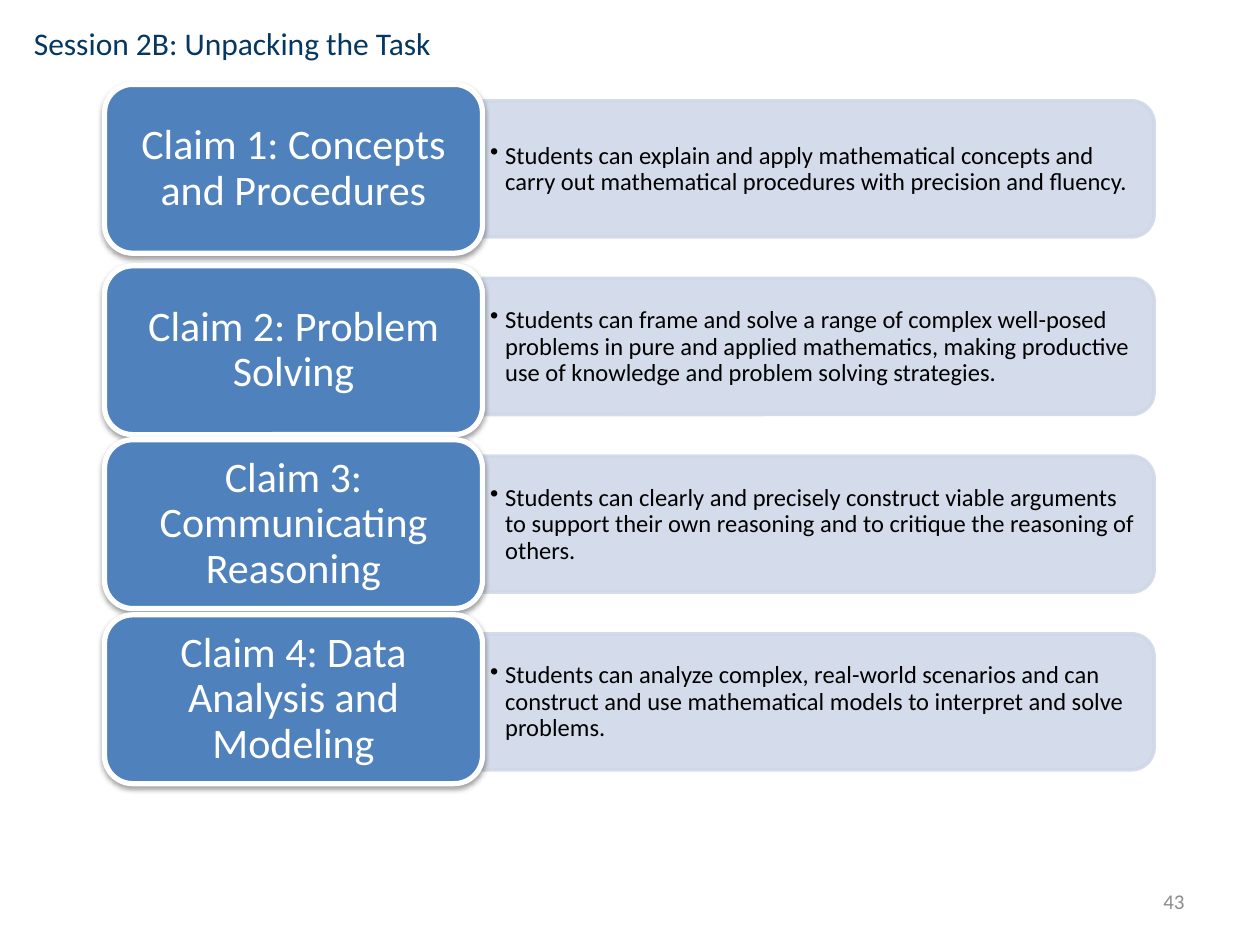
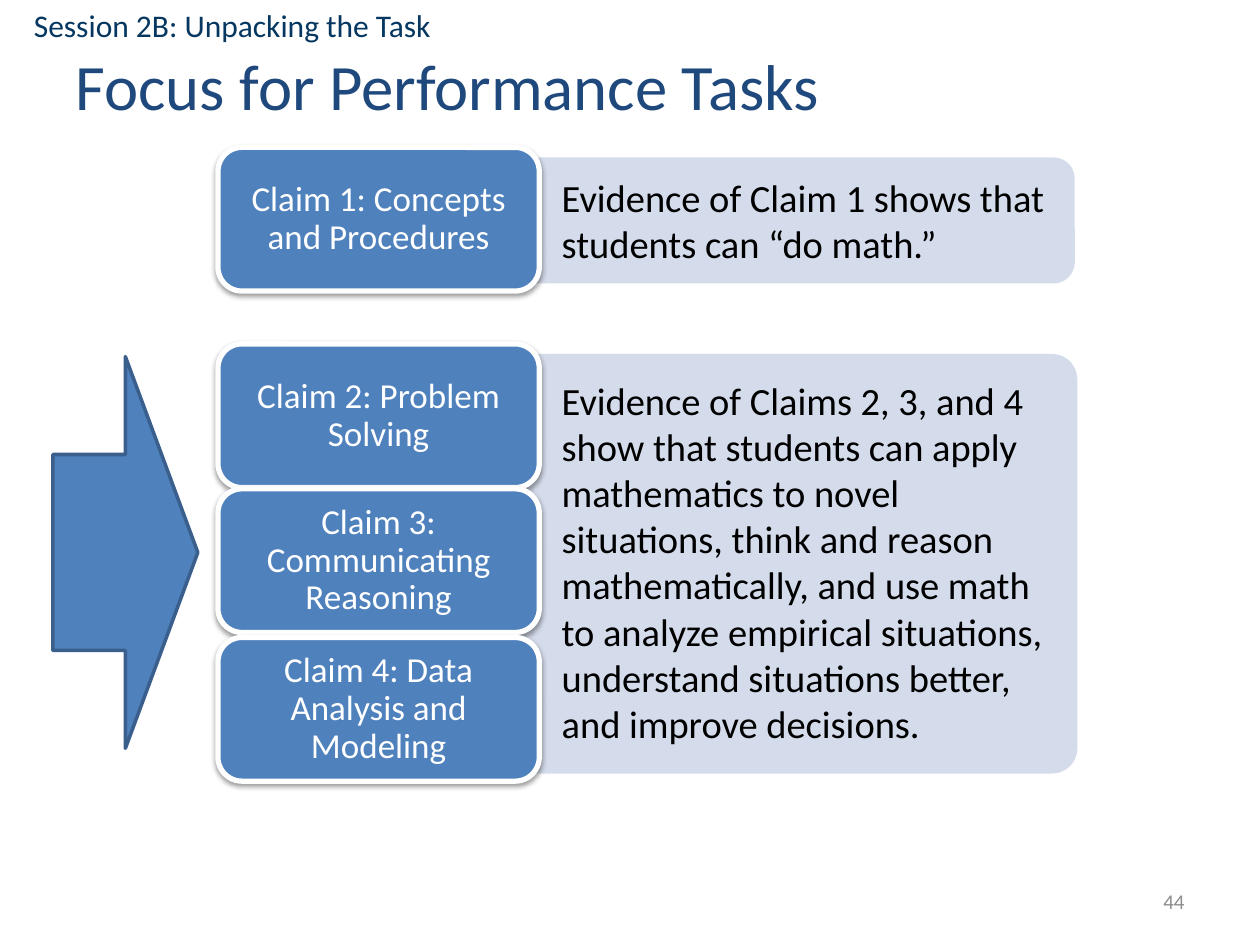
from lxml import etree
from pptx import Presentation
from pptx.dml.color import RGBColor
from pptx.enum.shapes import MSO_SHAPE
from pptx.enum.text import MSO_ANCHOR, MSO_AUTO_SIZE, PP_ALIGN
from pptx.oxml.ns import qn
from pptx.util import Inches, Pt

ROUNDED = MSO_SHAPE.ROUNDED_RECTANGLE
ROUNDED_TOP = MSO_SHAPE.ROUND_2_SAME_RECTANGLE
RIGHT_ARROW = MSO_SHAPE.RIGHT_ARROW
MIDDLE = MSO_ANCHOR.MIDDLE
LEFT, CENTER, RIGHT = PP_ALIGN.LEFT, PP_ALIGN.CENTER, PP_ALIGN.RIGHT
GROW, FIXED = MSO_AUTO_SIZE.SHAPE_TO_FIT_TEXT, MSO_AUTO_SIZE.NONE
LAYOUT_TITLE_ONLY, LAYOUT_BLANK = 5, 6

FONT = "Calibri"
COLORS = {
    "card": "4F81BD",
    "band": "D0D8E8",
    "arrow_edge": "3A5F8C",
    "white": "FFFFFF",
    "black": "000000",
    "title": "1F497D",
    "session": "053760",
    "number": "8C8C8C",
}
SESSION = "Session 2B: Unpacking the Task"
CLAIMS = [
    ("Claim 1: Concepts and Procedures",
     "Students can explain and apply mathematical concepts and carry out "
     "mathematical procedures with precision and fluency."),
    ("Claim 2: Problem Solving",
     "Students can frame and solve a range of complex well-posed problems in "
     "pure and applied mathematics, making productive use of knowledge and "
     "problem solving strategies."),
    ("Claim 3: Communicating Reasoning",
     "Students can clearly and precisely construct viable arguments to support "
     "their own reasoning and to critique the reasoning of others."),
    ("Claim 4: Data Analysis and Modeling",
     "Students can analyze complex, real-world scenarios and can construct and "
     "use mathematical models to interpret and solve problems."),
]
EVIDENCE_BASIC = "Evidence of Claim 1 shows that students can “do math.”"
EVIDENCE_APPLIED = (
    "Evidence of Claims 2, 3, and 4 show that students can apply mathematics to "
    "novel situations, think and reason mathematically, and use math to analyze "
    "empirical situations, understand situations better, and improve decisions."
)


def rgb(name):
    return RGBColor.from_string(COLORS[name])


def inches(box):
    return [Inches(value) for value in box]


def set_insets(frame, side, vertical):
    frame.margin_left = frame.margin_right = Inches(side)
    frame.margin_top = frame.margin_bottom = Inches(vertical)


def write(paragraph, text, size, color, align=LEFT, spacing=None):
    paragraph.alignment = align
    if spacing:
        paragraph.line_spacing = spacing
    run = paragraph.add_run()
    run.text = text
    run.font.name = FONT
    run.font.size = Pt(size)
    run.font.color.rgb = rgb(color)


def add_text(slide, box, text, size, color, align=LEFT, wrap=True):
    """Add a text box and return its frame for further settings."""
    frame = slide.shapes.add_textbox(*inches(box)).text_frame
    frame.word_wrap = wrap
    write(frame.paragraphs[0], text, size, color, align)
    return frame


def add_outline(slide, preset, box, fill, line=None, line_width=2):
    shape = slide.shapes.add_shape(preset, *inches(box))
    shape.shadow.inherit = False
    shape.fill.solid()
    shape.fill.fore_color.rgb = rgb(fill)
    if line:
        shape.line.color.rgb = rgb(line)
        shape.line.width = Pt(line_width)
    else:
        shape.line.fill.background()
    return shape


def add_alpha(parent, percent):
    etree.SubElement(parent, qn("a:alpha"), val=str(percent * 1000))


def make_translucent(shape):
    for color in shape._element.spPr.iter(qn("a:srgbClr")):
        add_alpha(color, 90)


def drop_shadow(shape):
    effects = shape._element.spPr.find(qn("a:effectLst"))
    shadow = etree.SubElement(
        effects, qn("a:outerShdw"), blurRad=str(Pt(3.1)), dist=str(Pt(1.6)),
        dir="5400000", rotWithShape="0")
    add_alpha(etree.SubElement(shadow, qn("a:srgbClr"), val=COLORS["black"]), 38)


def add_claim_card(slide, box, claim, size, insets):
    card = add_outline(slide, ROUNDED, box, "card", "white", 3)
    drop_shadow(card)
    frame = card.text_frame
    frame.word_wrap = True
    frame.vertical_anchor = MIDDLE
    set_insets(frame, *insets)
    write(frame.paragraphs[0], claim, size, "white", CENTER, 0.9)


def add_description_band(slide, left, top, width, height):
    """Add a band rounded on its right end: a round-topped shape turned by 90°."""
    turned = (left + (width - height) / 2, top - (width - height) / 2, height, width)
    band = add_outline(slide, ROUNDED_TOP, turned, "band", "band")
    band.rotation = 90
    make_translucent(band)


def add_description(slide, box, text):
    frame = add_text(slide, box, text, 14, "black")
    frame.vertical_anchor = MIDDLE
    set_insets(frame, 0.06, 0.03)
    paragraph = frame.paragraphs[0]
    properties = paragraph._p.get_or_add_pPr()
    properties.set("marL", str(Inches(0.12)))
    properties.set("indent", str(-Inches(0.12)))
    etree.SubElement(properties, qn("a:buChar"), char="•")
    paragraph.line_spacing = 0.9


def add_evidence_panel(slide, box, corner=None):
    panel = add_outline(slide, ROUNDED, box, "band")
    if corner:
        panel.adjustments[0] = corner
    make_translucent(panel)


def add_evidence(slide, box, text):
    add_text(slide, box, text, 22, "black").auto_size = GROW


def add_session_and_number(slide, session_top, number):
    session = add_text(slide, (0.17, session_top, 3.41, 0.4), SESSION, 18,
                       "session", wrap=False)
    session.auto_size = GROW
    page = add_text(slide, (7.17, 6.95, 2.33, 0.4), str(number), 12, "number", RIGHT)
    page.vertical_anchor = MIDDLE


def set_title(slide, box, text):
    title = slide.shapes.title
    title.left, title.top, title.width, title.height = inches(box)
    frame = title.text_frame
    frame.auto_size = FIXED
    frame.vertical_anchor = MIDDLE
    write(frame.paragraphs[0], text, 37, "title")


def build_claims_slide(prs):
    slide = prs.slides.add_slide(prs.slide_layouts[LAYOUT_BLANK])
    card_tops = [0.67, 2.11, 3.49, 4.88]
    for row, ((claim, description), card_top) in enumerate(zip(CLAIMS, card_tops)):
        band_top = 0.8 + 1.41 * row
        add_description_band(slide, 3.83, band_top, 5.33, 1.08)
        add_description(slide, (3.83, band_top + 0.06, 5.28, 0.97), description)
        add_claim_card(slide, (0.83, card_top, 3, 1.34), claim, 24, (0.1, 0.05))
    add_session_and_number(slide, 0.14, 43)


def build_focus_slide(prs):
    slide = prs.slides.add_slide(prs.slide_layouts[LAYOUT_TITLE_ONLY])
    set_title(slide, (0.5, 0.17, 6.5, 1), "Focus for Performance Tasks")
    add_evidence_panel(slide, (4.05, 1.25, 4.48, 1))
    add_evidence_panel(slide, (3.86, 2.81, 4.69, 3.33), 0.06)
    card_tops = [1.17, 2.73, 3.88, 5.06]
    for (claim, _), top in zip(CLAIMS, card_tops):
        add_claim_card(slide, (1.73, top, 2.55, 1.14), claim, 20, (0.08, 0.04))
    add_evidence(slide, (4.36, 1.33, 4.18, 0.84), EVIDENCE_BASIC)
    add_evidence(slide, (4.36, 2.94, 4.07, 3.06), EVIDENCE_APPLIED)
    add_session_and_number(slide, 0, 44)
    add_outline(slide, RIGHT_ARROW, (0.42, 2.83, 1.15, 3.11), "card", "arrow_edge")


def main():
    prs = Presentation()
    prs.slide_width, prs.slide_height = Inches(10), Inches(7.5)
    build_claims_slide(prs)
    build_focus_slide(prs)
    prs.save("out.pptx")


if __name__ == "__main__":
    main()
